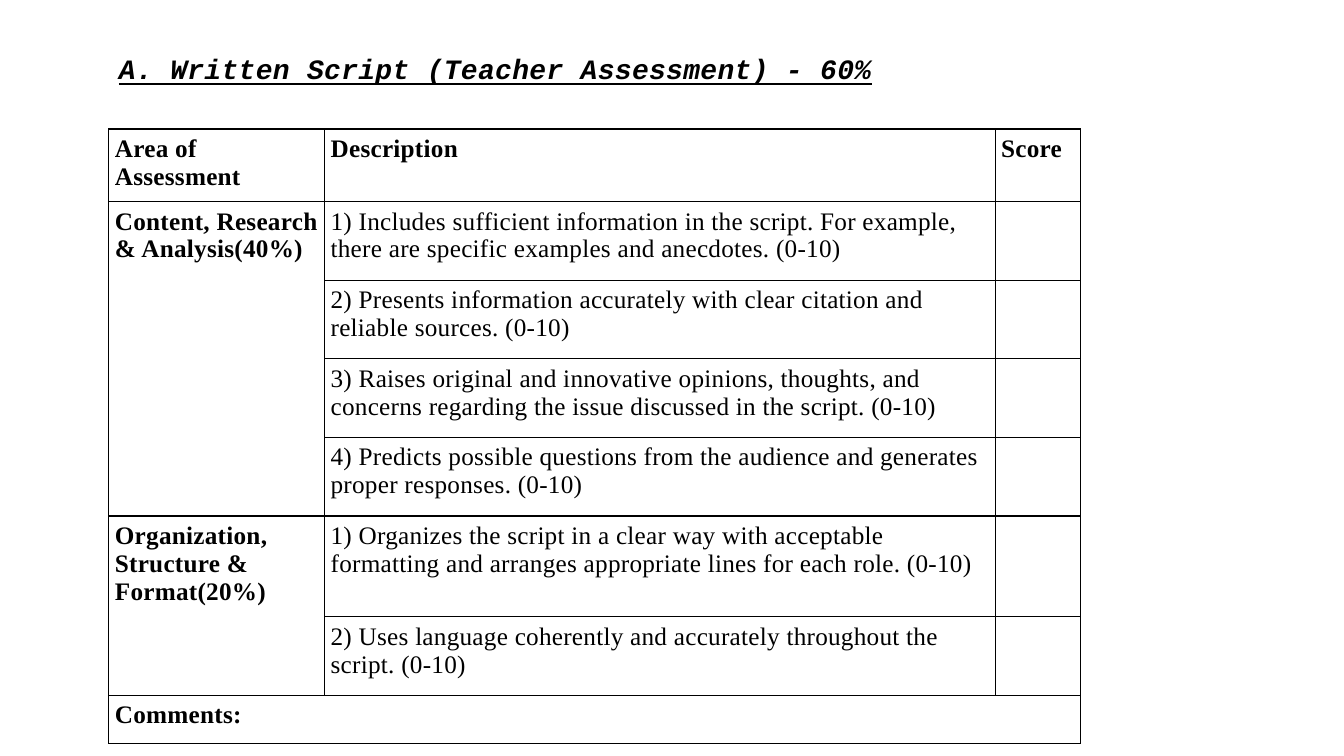
from lxml.etree import SubElement
from pptx import Presentation
from pptx.dml.color import RGBColor
from pptx.enum.text import MSO_ANCHOR, MSO_AUTO_SIZE, PP_ALIGN
from pptx.oxml import parse_xml
from pptx.oxml.ns import nsdecls
from pptx.util import Pt

PX = 9144  # EMU per px, 100 px to the inch
BLACK = RGBColor(0x00, 0x00, 0x00)
LETTER_SPACING = 20  # hundredths of a point
CELL_INSET = 6
BORDER = 12700

COLUMN_WIDTHS = [214, 665, 85]
ROW_HEIGHTS = [72, 78, 78, 78, 78, 100, 78, 48]
HEADINGS = ["Area of Assessment", "Description", "Score"]
AREAS = [
    ("Content, Research & Analysis(40%)", [
        "1) Includes sufficient information in the script. For example, "
        "there are specific examples and anecdotes. (0-10)",
        "2) Presents information accurately with clear citation and "
        "reliable sources. (0-10)",
        "3) Raises original and innovative opinions, thoughts, and concerns "
        "regarding the issue discussed in the script. (0-10)",
        "4) Predicts possible questions from the audience and generates "
        "proper responses. (0-10)",
    ]),
    ("Organization, Structure & Format(20%)", [
        "1) Organizes the script in a clear way with acceptable formatting "
        "and arranges appropriate lines for each role. (0-10)",
        "2) Uses language coherently and accurately throughout the script. "
        "(0-10)",
    ]),
]


def style_text(paragraph, font_name, size, bold):
    for run in paragraph.runs:
        run.font.name = font_name
        run.font.size = Pt(size)
        run.font.bold = bold
        run.font.color.rgb = BLACK
        run.font._element.set("spc", str(LETTER_SPACING))


def add_heading(slide, text):
    heading = slide.shapes.title
    heading.left, heading.top = 108 * PX, 46 * PX
    heading.width, heading.height = 860 * PX, 44 * PX
    frame = heading.text_frame
    frame.text = text
    frame.word_wrap = True
    frame.auto_size = MSO_AUTO_SIZE.NONE
    frame.vertical_anchor = MSO_ANCHOR.MIDDLE
    paragraph = frame.paragraphs[0]
    paragraph.alignment = PP_ALIGN.LEFT
    style_text(paragraph, "Courier New", 20, True)
    paragraph.runs[0].font.italic = True
    paragraph.runs[0].font.underline = True


def outline_cell(cell):
    """Give the cell no fill and a thin black line on every side."""
    cell.fill.background()
    properties = cell._tc.get_or_add_tcPr()
    for position, side in enumerate(("lnL", "lnR", "lnT", "lnB")):
        line = parse_xml(f'<a:{side} {nsdecls("a")} w="{BORDER}"/>')
        fill = SubElement(line, "{%s}solidFill" % line.nsmap["a"])
        SubElement(fill, "{%s}srgbClr" % line.nsmap["a"], val=str(BLACK))
        properties.insert(position, line)


def write_cell(cell, text, bold=False):
    cell.text = text
    style_text(cell.text_frame.paragraphs[0], "Times New Roman", 18, bold)


def add_rubric(slide):
    rubric = slide.shapes.add_table(
        len(ROW_HEIGHTS), len(COLUMN_WIDTHS), 108 * PX, 128 * PX,
        sum(COLUMN_WIDTHS) * PX, sum(ROW_HEIGHTS) * PX).table
    rubric.first_row = rubric.horz_banding = False
    for column, width in zip(rubric.columns, COLUMN_WIDTHS):
        column.width = width * PX
    for row, height in zip(rubric.rows, ROW_HEIGHTS):
        row.height = height * PX
    for cell in rubric.iter_cells():
        cell.margin_left = cell.margin_top = cell.margin_bottom = CELL_INSET * PX
        cell.margin_right = (CELL_INSET - 1) * PX
        outline_cell(cell)

    for column, heading in enumerate(HEADINGS):
        write_cell(rubric.cell(0, column), heading, bold=True)
    first = 1
    for area, criteria in AREAS:
        last = first + len(criteria) - 1
        rubric.cell(first, 0).merge(rubric.cell(last, 0))
        write_cell(rubric.cell(first, 0), area, bold=True)
        for row, criterion in enumerate(criteria, first):
            write_cell(rubric.cell(row, 1), criterion)
        first = last + 1
    rubric.cell(first, 0).merge(rubric.cell(first, len(COLUMN_WIDTHS) - 1))
    write_cell(rubric.cell(first, 0), "Comments:", bold=True)


def main():
    presentation = Presentation()
    presentation.slide_width = 1333 * PX
    presentation.slide_height = 750 * PX
    title_only = presentation.slide_layouts[5]
    slide = presentation.slides.add_slide(title_only)
    add_heading(slide, "A. Written Script (Teacher Assessment) - 60%")
    add_rubric(slide)
    presentation.save("out.pptx")


if __name__ == "__main__":
    main()
